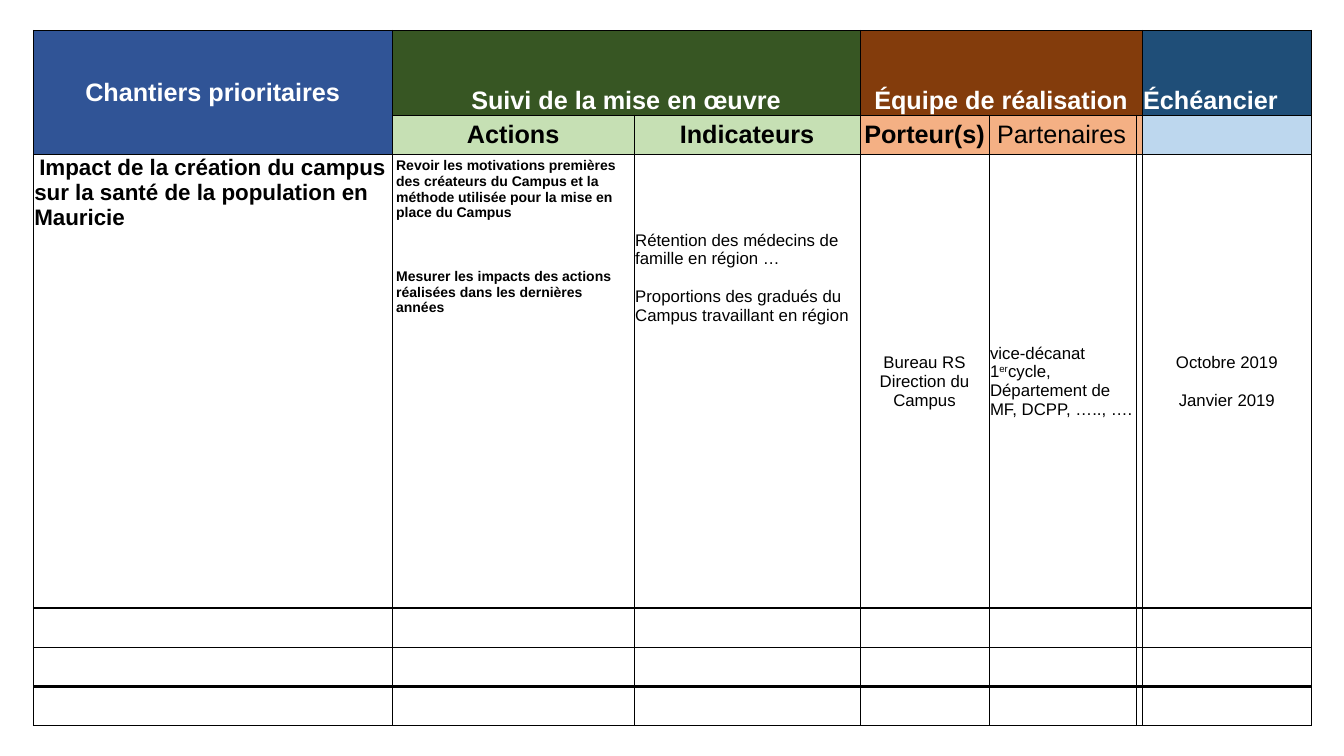
from dataclasses import dataclass

from lxml import etree
from pptx import Presentation
from pptx import util as u
from pptx.dml.color import RGBColor
from pptx.enum import text
from pptx.oxml import ns

LEFT, CENTER = text.PP_ALIGN.LEFT, text.PP_ALIGN.CENTER
TOP, MIDDLE, BOTTOM = (text.MSO_ANCHOR.TOP, text.MSO_ANCHOR.MIDDLE,
                       text.MSO_ANCHOR.BOTTOM)
COLUMN_WIDTHS = [3.56, 2.4, 2.24, 1.28, 1.46, 0.04, 1.68]
ROW_HEIGHTS = [0.84, 0.39, 4.5, 0.39, 0.39, 0.39]
RULE_WIDTHS = [0.5, 0.5, 1, 2, 0.5, 2, 1]  # horizontal rules, top to bottom
SUPERSCRIPT_MARK = "|"


@dataclass
class CellContent:
    row: int
    column: int
    paragraphs: tuple[str, ...] = ()
    fill: str = ""
    size: float = 12
    bold: bool = False
    color: str = "000000"
    align: int = LEFT
    anchor: int = TOP
    row_span: int = 1
    column_span: int = 1
    gap: float = 0
    indent: float = 0
    left: float = 0.01
    top: float = 0.01


def group_header(column: int, title: str, fill: str, **options) -> CellContent:
    settings = dict(size=18, bold=True, color="FFFFFF", align=CENTER, anchor=BOTTOM)
    return CellContent(0, column, (title,), fill, **(settings | options))


def column_header(column: int, title: str, fill: str, **options) -> CellContent:
    settings = dict(size=18, bold=True, align=CENTER, anchor=MIDDLE)
    return CellContent(1, column, (title,), fill, **(settings | options))


CONTENTS = [
    # Group headers
    group_header(0, "Chantiers prioritaires", "305496", anchor=MIDDLE, row_span=2),
    group_header(1, "Suivi de la mise en œuvre", "375623", column_span=2),
    group_header(3, "Équipe de réalisation", "833C0C", column_span=3),
    group_header(6, "Échéancier", "1F4E78", align=LEFT),
    # Column headers
    column_header(1, "Actions", "C6E0B4"),
    column_header(2, "Indicateurs", "C6E0B4"),
    column_header(3, "Porteur(s)", "F4B084"),
    column_header(4, "Partenaires", "F4B084", bold=False, align=LEFT, left=0.08),
    CellContent(1, 5, fill="F4B084"),
    CellContent(1, 6, fill="BDD7EE"),
    # First project
    CellContent(2, 0, ("Impact de la création du campus sur la santé de la "
                       "population en Mauricie",), size=16, bold=True, indent=0.05),
    CellContent(2, 1, ("Revoir les motivations premières des créateurs du Campus "
                       "et la méthode utilisée pour la mise en place du Campus",
                       "Mesurer les impacts des actions réalisées dans les "
                       "dernières années"),
                size=10, bold=True, gap=34.5, left=0.04, top=0.04),
    CellContent(2, 2, ("Rétention des médecins de famille en région …",
                       "Proportions des gradués du Campus travaillant en région"),
                gap=13.8, top=0.76),
    CellContent(2, 3, ("Bureau RS", "Direction du Campus"),
                align=CENTER, anchor=MIDDLE),
    CellContent(2, 4, ("vice-décanat 1|er|cycle, Département de MF, DCPP, ….., ….",),
                anchor=MIDDLE),
    CellContent(2, 6, ("Octobre 2019", "Janvier 2019"),
                align=CENTER, anchor=MIDDLE, gap=13.8),
]


def set_attributes(target, values: dict) -> None:
    for name, value in values.items():
        setattr(target, name, value)


def rgb(color: str) -> RGBColor:
    return RGBColor.from_string(color)


def draw_borders(cell, top: float, bottom: float) -> None:
    properties = cell._tc.get_or_add_tcPr()
    widths = {"a:lnL": 0.5, "a:lnR": 0.5, "a:lnT": top, "a:lnB": bottom}
    for tag, width in widths.items():
        line = etree.SubElement(properties, ns.qn(tag), w=str(u.Pt(width)))
        fill = etree.SubElement(line, ns.qn("a:solidFill"))
        etree.SubElement(fill, ns.qn("a:srgbClr"), val="000000")


def write_paragraph(paragraph, words: str, content: CellContent) -> None:
    paragraph.alignment = content.align
    if content.indent:
        paragraph._p.get_or_add_pPr().set("indent", str(u.Inches(content.indent)))
    for index, part in enumerate(words.split(SUPERSCRIPT_MARK)):
        run = paragraph.add_run()
        run.text = part
        set_attributes(run.font, {"name": "Arial", "size": u.Pt(content.size),
                                  "bold": content.bold})
        run.font.color.rgb = rgb(content.color)
        if index % 2:
            run._r.get_or_add_rPr().set("baseline", "30000")


def fill_cell(table, content: CellContent) -> None:
    cell = table.cell(content.row, content.column)
    if content.row_span * content.column_span > 1:
        cell.merge(table.cell(content.row + content.row_span - 1,
                              content.column + content.column_span - 1))
    set_attributes(cell, {"vertical_anchor": content.anchor,
                          "margin_left": u.Inches(content.left),
                          "margin_top": u.Inches(content.top)})
    if content.fill:
        cell.fill.solid()
        cell.fill.fore_color.rgb = rgb(content.fill)
    frame = cell.text_frame
    for index, words in enumerate(content.paragraphs):
        paragraph = frame.add_paragraph() if index else frame.paragraphs[0]
        if index:
            paragraph.space_before = u.Pt(content.gap)
        write_paragraph(paragraph, words, content)


def main() -> None:
    presentation = Presentation()
    set_attributes(presentation, {"slide_width": u.Inches(13.33),
                                  "slide_height": u.Inches(7.5)})
    slide = presentation.slides.add_slide(presentation.slide_layouts[6])

    # Table grid
    table = slide.shapes.add_table(
        len(ROW_HEIGHTS), len(COLUMN_WIDTHS), u.Inches(0.33), u.Inches(0.3),
        u.Inches(sum(COLUMN_WIDTHS)), u.Inches(sum(ROW_HEIGHTS))).table
    set_attributes(table, {"first_row": False, "horz_banding": False})
    for column, width in zip(table.columns, COLUMN_WIDTHS):
        column.width = u.Inches(width)
    for index, height in enumerate(ROW_HEIGHTS):
        row = table.rows[index]
        row.height = u.Inches(height)
        for cell in row.cells:
            draw_borders(cell, RULE_WIDTHS[index], RULE_WIDTHS[index + 1])
            cell.fill.background()
            set_attributes(cell, {"margin_left": u.Inches(0.01),
                                  "margin_right": u.Inches(0.01),
                                  "margin_top": u.Inches(0.01),
                                  "margin_bottom": 0})

    # Cell contents
    for content in CONTENTS:
        fill_cell(table, content)
    presentation.save("out.pptx")


if __name__ == "__main__":
    main()
